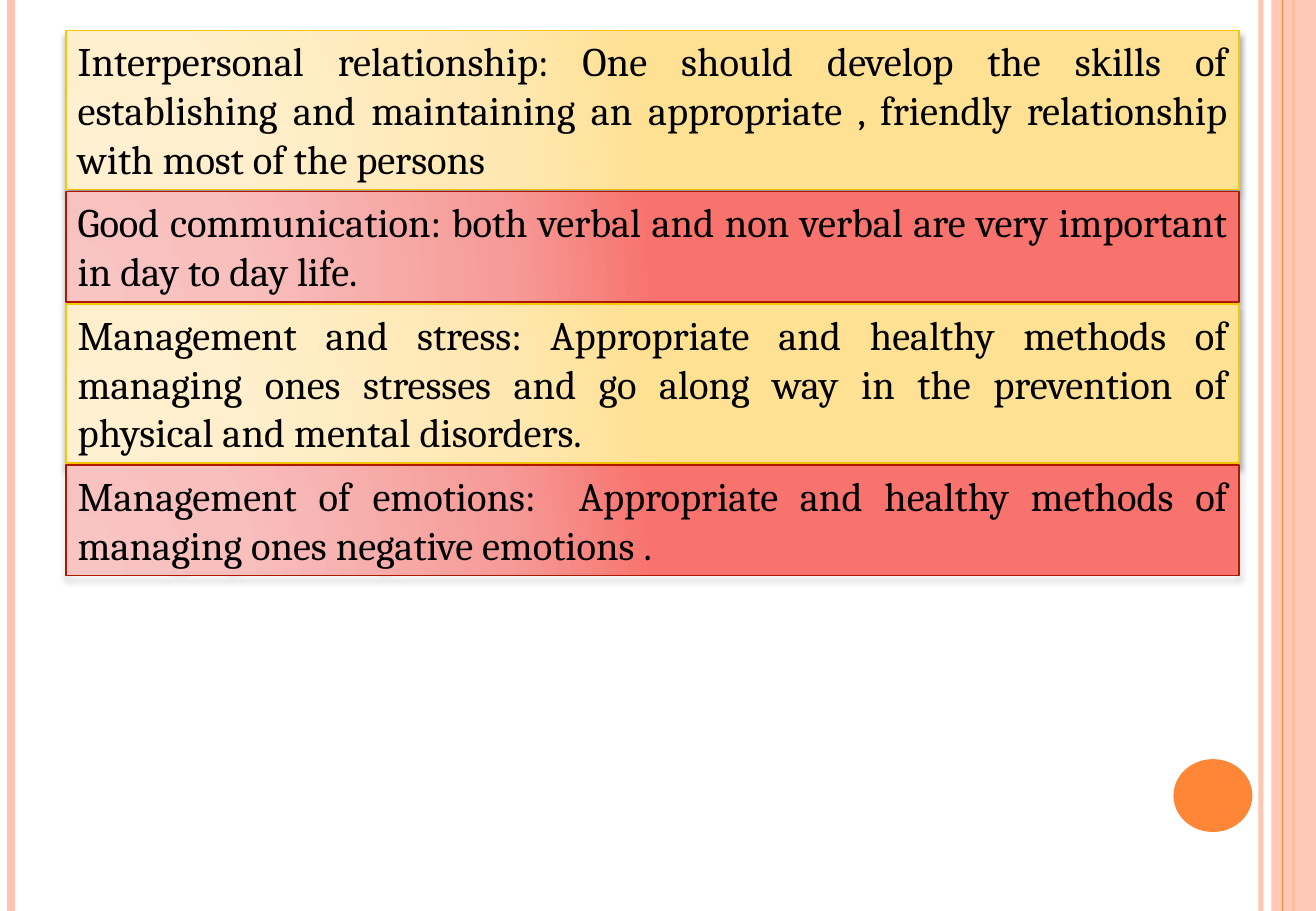
import pptx
import pptx.util
import pptx.dml.color
import pptx.enum.shapes
import pptx.enum.text
import pptx.oxml
import pptx.oxml.ns

Pt = pptx.util.Pt
Shape = pptx.enum.shapes.MSO_SHAPE
NS = pptx.oxml.ns.nsdecls("a")
WIDE, HIGH = 780, 540
COLORS = {"peach": "FEC3AE", "orange": "FE8637", "gold": "F8C700",
          "red": "AC1800", "black": "000000"}
FADES = {"gold": ["FFF0D1", "FFEFCC", "FFE7B1", "FFE193"],
         "red": ["F8C5C3", "F8BFBD", "F69B98", "F8736E"]}
STOPS = [0, 30, 75, 100]

deck = pptx.Presentation()
deck.slide_width, deck.slide_height = Pt(WIDE), Pt(HIGH)
page = deck.slides.add_slide(deck.slide_layouts[6])


def rgb(name):
    return pptx.dml.color.RGBColor.from_string(COLORS[name])


def write(shape, text, font="Cambria", size=24, color="black"):
    """Fill a shape with one justified paragraph."""
    frame = shape.text_frame
    frame.word_wrap = True
    frame.vertical_anchor = pptx.enum.text.MSO_ANCHOR.TOP
    para = frame.paragraphs[0]
    para.alignment = pptx.enum.text.PP_ALIGN.JUSTIFY
    run = para.add_run()
    run.text = text
    run.font.name, run.font.size = font, Pt(size)
    run.font.color.rgb = rgb(color)


# Border lines, side band and dot
lines = {}
for name, x, color, width, alpha in [
        ("inner", 747.4, "peach", 3, 93), ("left", 6.5, "peach", 4.5, 100),
        ("middle", 766.8, "orange", 1.5, 100)]:
    lines[name] = (x, color, width, alpha)

rules = {}
for name, (x, color, width, alpha) in list(lines.items()) + [
        ("band", (753.6, "peach", 26.4, 87)),
        ("edge", (760.3, "orange", 0.75, 100))]:
    if name == "band":
        item = page.shapes.add_shape(Shape.RECTANGLE, Pt(x), 0, Pt(width), Pt(HIGH))
        item.shadow.inherit = False
        item.line.fill.background()
        paint = item.fill
        paint.solid()
    else:
        item = page.shapes.add_connector(
            pptx.enum.shapes.MSO_CONNECTOR.STRAIGHT, Pt(x), 0, Pt(x), Pt(HIGH))
        item.line.width = Pt(width)
        paint = item.line.fill
        paint.solid()
        item._element.spPr.append(pptx.oxml.parse_xml(f"<a:effectLst {NS}/>"))
    paint.fore_color.rgb = rgb(color)
    if alpha < 100:
        tint = item._element.spPr.find(".//" + pptx.oxml.ns.qn("a:srgbClr"))
        tint.append(pptx.oxml.parse_xml(f'<a:alpha {NS} val="{alpha * 1000}"/>'))
    rules[name] = item
rules["middle"].begin_connect(rules["band"], 0)
rules["middle"].end_connect(rules["band"], 2)

dot = page.shapes.add_shape(Shape.OVAL, Pt(695.5), Pt(450), Pt(46.8), Pt(43.2))
dot.shadow.inherit = False
dot.fill.solid()
dot.fill.fore_color.rgb = rgb("orange")
dot.line.fill.background()

# Stacked skill boxes, each as tall as its lines of text
skills = [
    ("gold", 3, "Interpersonal relationship: One should develop the skills of "
     "establishing and maintaining an appropriate , friendly relationship "
     "with most of the persons"),
    ("red", 2, "Good communication: both verbal and non verbal are very "
     "important in day to day life."),
    ("gold", 3, "Management and stress: Appropriate and healthy methods of "
     "managing ones stresses and go along way in the prevention of physical "
     "and mental disorders."),
    ("red", 2, "Management of emotions:  Appropriate and healthy methods of "
     "managing ones negative emotions ."),
]
top, gap = 18, 1.2
for color, count, text in skills:
    high = 28.8 * count + 7.9
    box = page.shapes.add_shape(Shape.RECTANGLE, Pt(39), Pt(top), Pt(695.5), Pt(high))
    box.line.color.rgb = rgb(color)
    box.line.width = Pt(1)
    box.shadow.inherit = False
    props = box._element.spPr
    stops = "".join(f'<a:gs pos="{pos * 1000}"><a:srgbClr val="{tone}"/></a:gs>'
                    for pos, tone in zip(STOPS, FADES[color]))
    props.find(pptx.oxml.ns.qn("a:prstGeom")).addnext(pptx.oxml.parse_xml(
        f'<a:gradFill {NS} rotWithShape="1"><a:gsLst>{stops}</a:gsLst>'
        '<a:path path="circle"><a:fillToRect l="5000" t="100000" r="120000" '
        'b="10000"/></a:path></a:gradFill>'))
    props.find(pptx.oxml.ns.qn("a:effectLst")).append(pptx.oxml.parse_xml(
        f'<a:outerShdw {NS} blurRad="{Pt(4)}" dist="{Pt(2)}" dir="5400000" '
        'rotWithShape="0"><a:srgbClr val="000000"><a:alpha val="40000"/>'
        '</a:srgbClr></a:outerShdw>'))
    write(box, text)
    top += high + gap

deck.save("out.pptx")
